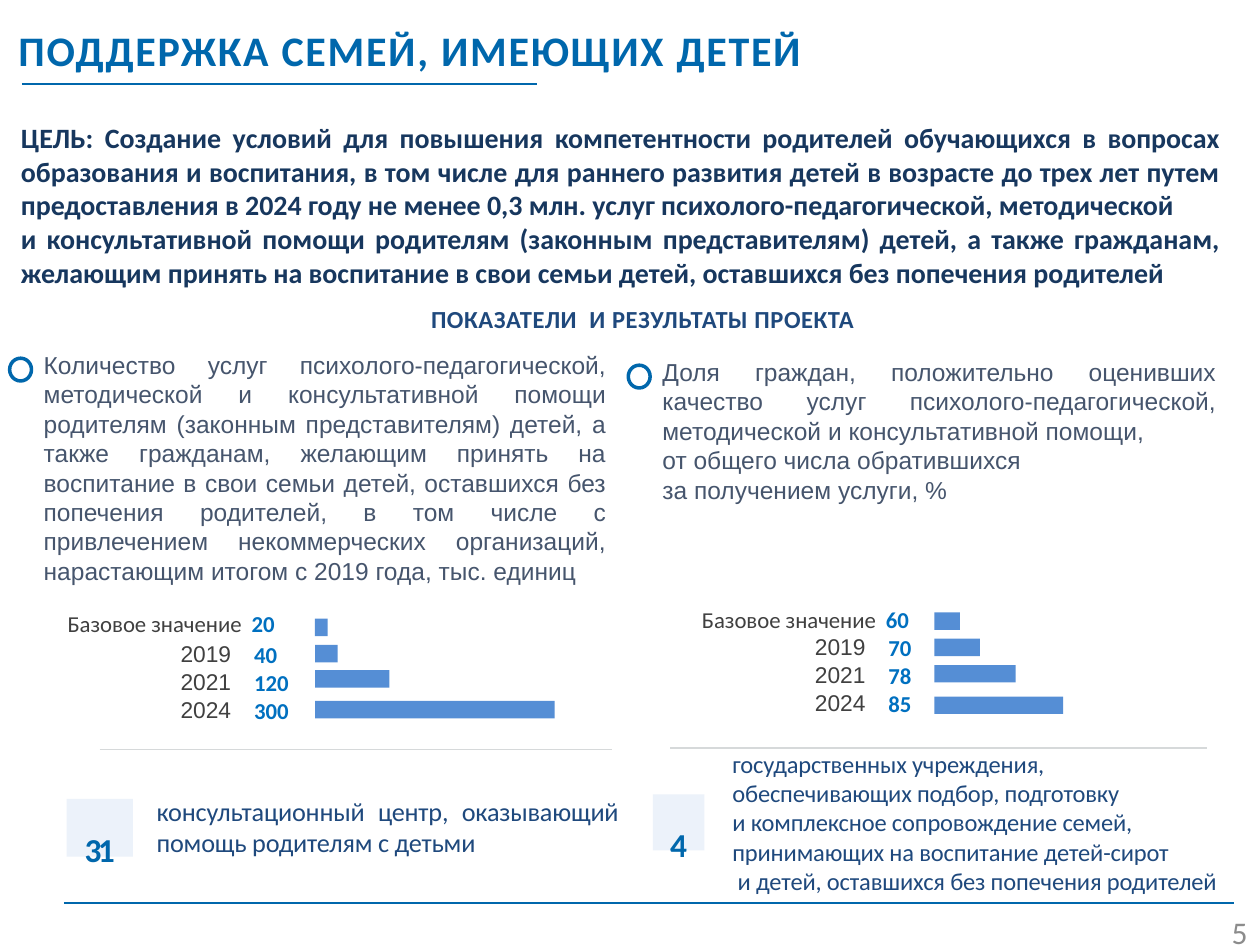
import pptx
import pptx.dml.color
import pptx.enum.shapes
import pptx.enum.text
import pptx.oxml.ns
import pptx.util
import lxml.etree

Pt = pptx.util.Pt
RGBColor = pptx.dml.color.RGBColor
Align = pptx.enum.text.PP_ALIGN
Anchor = pptx.enum.text.MSO_ANCHOR
Shape = pptx.enum.shapes.MSO_SHAPE

BLUE = RGBColor(0x00, 0x67, 0xAC)
VALUE_BLUE = RGBColor(0x00, 0x70, 0xC0)
BAR_BLUE = RGBColor(0x55, 0x8E, 0xD5)
NAVY = RGBColor(0x17, 0x37, 0x5E)
TEXT_BLUE = RGBColor(0x1F, 0x49, 0x7D)
TILE = RGBColor(0xEC, 0xF2, 0xFA)
SLATE = RGBColor(0x46, 0x55, 0x6D)
DARK = RGBColor(0x40, 0x40, 0x40)
GREY = RGBColor(0x8C, 0x8C, 0x8C)
PALE = RGBColor(0xD6, 0xD9, 0xDA)

BAR_HEIGHT = 10


def points(box):
    return [Pt(length) for length in box]


def set_text(frame, lines, size, color, font="Calibri", bold=False,
             align=Align.LEFT, spacing=0, margins=(0, 0), baseline=0):
    frame.word_wrap = True
    frame.auto_size = pptx.enum.text.MSO_AUTO_SIZE.NONE
    frame.vertical_anchor = Anchor.TOP
    frame.margin_left = frame.margin_right = Pt(margins[0])
    frame.margin_top = frame.margin_bottom = Pt(margins[1])
    frame.text = "\n".join(lines)
    for para in frame.paragraphs:
        para.alignment = align
        for span in para.runs:
            span.font.size = Pt(size)
            span.font.name = font
            span.font.bold = bold
            span.font.color.rgb = color
            properties = span.font._element
            if spacing:
                properties.set("spc", str(round(spacing * 100)))
            if baseline:
                properties.set("baseline", str(baseline * 1000))


def add_text(page, box, lines, size, color, **style):
    text_box = page.shapes.add_textbox(*points(box))
    set_text(text_box.text_frame, lines, size, color, **style)
    return text_box


def add_block(page, kind, box, fill=None):
    block = page.shapes.add_shape(kind, *points(box))
    block.shadow.inherit = False
    if fill is None:
        block.fill.background()
    else:
        block.fill.solid()
        block.fill.fore_color.rgb = fill
    block.line.fill.background()
    return block


def add_rule(page, left, top, right, color):
    rule = page.shapes.add_connector(
        pptx.enum.shapes.MSO_CONNECTOR.STRAIGHT, *points((left, top, right, top)))
    rule.line.color.rgb = color
    rule.line.width = Pt(1)
    lxml.etree.SubElement(rule._element.spPr, pptx.oxml.ns.qn("a:effectLst"))


def add_heading(page, box, text):
    left, top, width, height = box
    title = page.shapes.title
    title.left, title.top, title.width, title.height = points(box)
    set_text(title.text_frame, [text], 24, BLUE, bold=True, spacing=1,
             margins=(4.5, 2.25))
    add_rule(page, left + 6.5, top + height + 2, left + 301, BLUE)


def add_indicator(page, box, lines):
    left, top, width, height = box
    ring = add_block(page, Shape.OVAL, (left - 19.5, top + 4.7, 12.5, 13))
    ring.line.color.rgb = BLUE
    ring.line.width = Pt(2)
    add_text(page, box, lines, 14, SLATE, font="Arial", align=Align.JUSTIFY)


def add_bars(page, box, label_width, bar_left, rows):
    left, top, width, height = box
    table = page.shapes.add_table(len(rows), 2, *points(box)).table
    table.first_row = False
    table.horz_banding = False
    table.columns[0].width = Pt(label_width)
    table.columns[1].width = Pt(width - label_width)
    for index, (label, value, row_height, bar_top, bar_width) in enumerate(rows):
        table.rows[index].height = Pt(row_height)
        base = index == 0
        label_cell, value_cell = table.cell(index, 0), table.cell(index, 1)
        styles = (
            (label_cell, label, "Calibri" if base else "Arial", DARK, False, Align.RIGHT),
            (value_cell, value, "Calibri", VALUE_BLUE, True, Align.LEFT),
        )
        for cell, text, font, color, bold, align in styles:
            cell.fill.background()
            cell.margin_left = cell.margin_right = 0
            cell.margin_top = cell.margin_bottom = 0
            cell.text_frame.text = text
            para = cell.text_frame.paragraphs[0]
            para.alignment = align
            para.font.size = Pt(13)
            for span in para.runs:
                span.font.size = Pt(13)
                span.font.name = font
                span.font.bold = bold
                span.font.color.rgb = color
        label_cell.margin_right = Pt(0 if base else 6)
        value_cell.margin_left = Pt(5.8 if base else 7.2)
        add_block(page, Shape.RECTANGLE,
                  (left + bar_left, top + bar_top, bar_width, BAR_HEIGHT), BAR_BLUE)


def add_result(page, box, tile_box, number, lines, size):
    tile = add_block(page, Shape.RECTANGLE, tile_box, TILE)
    set_text(tile.text_frame, [number], 33, BLUE, bold=True,
             align=Align.CENTER, spacing=-2.1, baseline=-10)
    return add_text(page, box, lines, size, TEXT_BLUE, align=Align.JUSTIFY,
                    spacing=-0.1, margins=(4.5, 2.25))


def main():
    deck = pptx.Presentation()
    deck.slide_width, deck.slide_height = points((720, 540))
    page = deck.slides.add_slide(deck.slide_layouts[5])

    add_heading(page, (6, 12, 554, 34), "ПОДДЕРЖКА СЕМЕЙ, ИМЕЮЩИХ ДЕТЕЙ")
    add_text(page, (12, 69, 685.5, 97.5), [
        "ЦЕЛЬ: Создание условий для повышения компетентности родителей обучающихся "
        "в вопросах образования и воспитания, в том числе для раннего развития детей "
        "в возрасте до трех лет путем предоставления в 2024 году не менее 0,3 млн. "
        "услуг психолого-педагогической, методической",
        "и консультативной помощи родителям (законным представителям) детей, "
        "а также гражданам, желающим принять на воспитание в свои семьи детей, "
        "оставшихся без попечения родителей",
    ], 16, NAVY, bold=True, align=Align.JUSTIFY)
    add_text(page, (190.5, 174, 353.5, 17.5), ["ПОКАЗАТЕЛИ  И РЕЗУЛЬТАТЫ ПРОЕКТА"],
             14, TEXT_BLUE, bold=True, align=Align.CENTER, spacing=0.3)

    add_indicator(page, (25, 200, 321.5, 135.5), [
        "Количество услуг психолого-педагогической, методической и консультативной "
        "помощи родителям (законным представителям) детей, а также гражданам, "
        "желающим принять на воспитание в свои семьи детей, оставшихся без попечения "
        "родителей, в том числе с привлечением некоммерческих организаций, "
        "нарастающим итогом с 2019 года, тыс. единиц",
    ])
    add_indicator(page, (378.5, 204, 316.5, 85), [
        "Доля граждан, положительно оценивших качество услуг "
        "психолого-педагогической, методической и консультативной помощи,",
        "от общего числа обратившихся",
        "за получением услуги, %",
    ])

    add_bars(page, (-3, 349, 204.5, 60), 141, 183, (
        ("Базовое значение", "20", 18, 4.5, 7.2),
        ("2019", "40", 13, 19.5, 13),
        ("2021", "120", 13, 34, 42.5),
        ("2024", "300", 16, 51.5, 137),
    ))
    add_bars(page, (373, 347, 184.5, 63.5), 127.5, 161, (
        ("Базовое значение", "60", 13, 3, 14.5),
        ("2019", "70", 13, 18, 26),
        ("2021", "78", 13, 33, 46.5),
        ("2024", "85", 24.5, 51, 73.5),
    ))

    add_rule(page, 57, 428.3, 350, PALE)
    add_rule(page, 383, 427.5, 690, PALE)
    add_result(page, (85, 452, 273, 42), (38, 456.5, 38, 33), "31",
               ["консультационный центр, оказывающий помощь родителям с детьми"], 15)
    institutions = add_result(page, (414, 425.5, 290, 90), (373, 454, 29.5, 32), "4", [
        "государственных учреждения,",
        "обеспечивающих подбор, подготовку",
        "и комплексное сопровождение семей, принимающих на воспитание детей-сирот",
        " и детей, оставшихся без попечения родителей",
    ], 14)
    institutions.text_frame.paragraphs[2].alignment = Align.LEFT

    add_rule(page, 36.5, 516, 705, BLUE)
    add_text(page, (630, 522, 83, 14), ["5"], 18, GREY, align=Align.RIGHT)
    deck.save("out.pptx")


if __name__ == "__main__":
    main()
